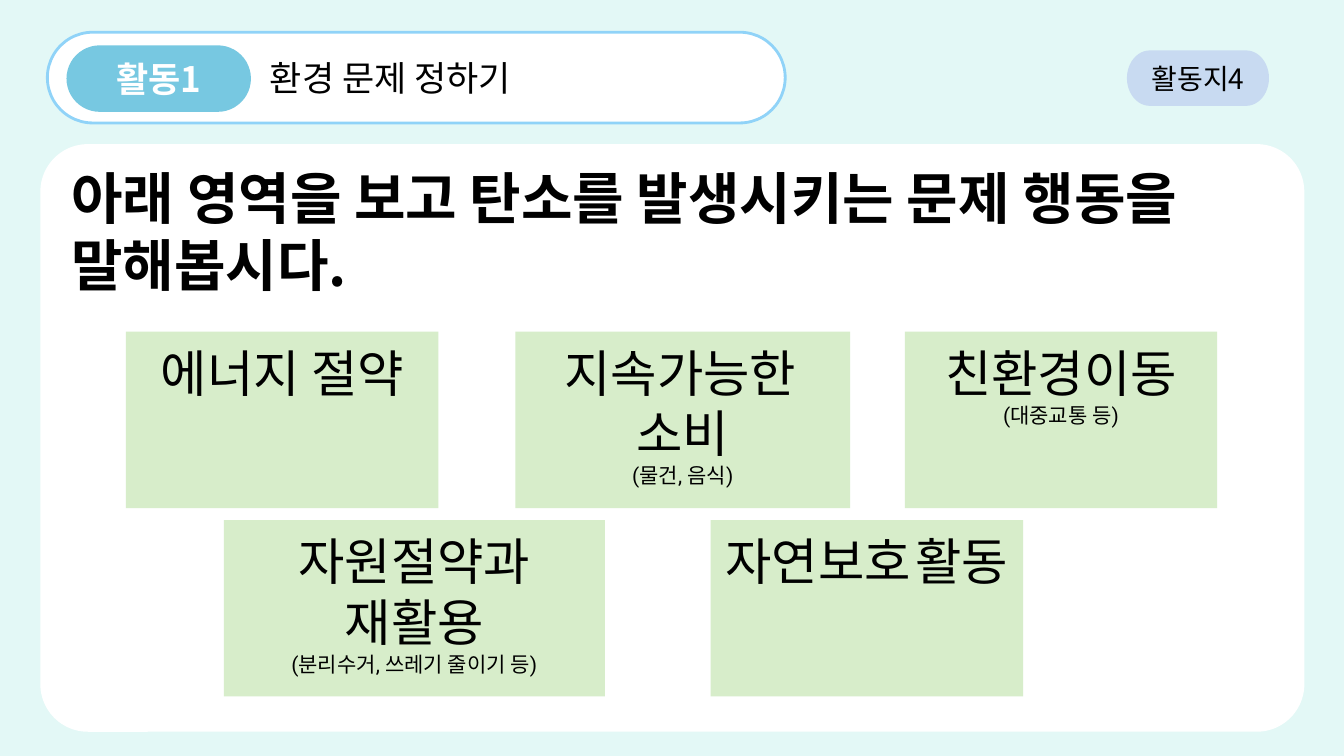
from dataclasses import dataclass

from lxml import etree
from pptx import Presentation, util as u
from pptx.dml.color import RGBColor
from pptx.enum import shapes, text
from pptx.oxml import ns

WIDE, HIGH = u.Inches(13.333), u.Inches(7.5)
COLS, ROWS = 40, 22.5


@dataclass(frozen=True)
class Theme:
    back: str = "E3F8F6"
    white: str = "FFFFFF"
    black: str = "000000"
    edge: str = "90D3F8"
    badge: str = "77C8E1"
    card: str = "D7EDCA"
    tag: str = "C8DAF1"
    font: str = "Noto Sans CJK KR"
    small: str = "Roboto"
    head: int = 40
    word: int = 36
    label: int = 25
    mark: int = 20
    note: int = 15


@dataclass(frozen=True)
class Box:
    """Left, top, width and height in grid columns and rows."""
    x: float
    y: float
    w: float
    h: float


@dataclass(frozen=True)
class Run:
    words: str
    size: int
    color: str = Theme.black
    bold: bool = False
    font: str = Theme.font


@dataclass(frozen=True)
class Card:
    row: int
    col: int
    wide: float
    lines: tuple


T = Theme()
ROUND = shapes.MSO_SHAPE.ROUNDED_RECTANGLE
CENTER, LEFT = text.PP_ALIGN.CENTER, text.PP_ALIGN.LEFT
TOP, MIDDLE = text.MSO_ANCHOR.TOP, text.MSO_ANCHOR.MIDDLE


def place(box: Box) -> tuple:
    return (u.Emu(int(box.x * WIDE / COLS)), u.Emu(int(box.y * HIGH / ROWS)),
            u.Emu(int(box.w * WIDE / COLS)), u.Emu(int(box.h * HIGH / ROWS)))


def write(shape, lines, align=CENTER, anchor=MIDDLE, pad=0.05) -> None:
    """Fill a shape with lines, each a tuple of runs."""
    frame = shape.text_frame
    frame.word_wrap = True
    frame.auto_size = text.MSO_AUTO_SIZE.NONE
    frame.vertical_anchor = anchor
    frame.margin_left = frame.margin_right = u.Inches(0.1)
    frame.margin_top = frame.margin_bottom = u.Inches(pad)
    frame.text = "\n".join("".join(r.words for r in line) for line in lines)
    for para, line in zip(frame.paragraphs, lines):
        para.alignment = align
        para.text = ""
        for item in line:
            run = para.add_run()
            run.text = item.words
            run.font.size = u.Pt(item.size)
            run.font.bold = item.bold
            run.font.color.rgb = RGBColor.from_string(item.color)
            run.font.name = item.font
            # Hangul takes the East Asian typeface
            east = etree.SubElement(run.font._element, ns.qn("a:ea"))
            east.set("typeface", T.font)


def draw(slide, kind, box: Box, fill: str, edge: str = "", bend=None):
    shape = slide.shapes.add_shape(kind, *place(box))
    shape.shadow.inherit = False
    shape.fill.solid()
    shape.fill.fore_color.rgb = RGBColor.from_string(fill)
    if edge:
        shape.line.color.rgb = RGBColor.from_string(edge)
        shape.line.width = u.Pt(2)
    else:
        shape.line.fill.background()
    if bend is not None:
        shape.adjustments[0] = bend
    return shape


def word(words: str) -> tuple:
    return (Run(words, T.word),)


def note(words: str) -> tuple:
    return (Run(words, T.note, font=T.small),)


GAP = note(" ")
CARDS = (
    Card(0, 0, 9.3, (word("에너지 절약"),)),
    Card(0, 1, 9.96, (word("지속가능한") + GAP, word("소비"), note("(물건, 음식)"))),
    Card(0, 2, 9.3, (word("친환경이동"), note("(대중교통 등)"))),
    Card(1, 0, 11.34, (word("자원절약과"), word("재활용"),
                       note("(분리수거, 쓰레기 줄이기 등)"))),
    Card(1, 1, 9.3, (word("자연보호") + GAP + word("활동"),)),
)
# First column and column step of each card row
STARTS, STEPS = (3.75, 6.66), (11.59, 14.49)


def main() -> None:
    deck = Presentation()
    deck.slide_width, deck.slide_height = WIDE, HIGH
    slide = deck.slides.add_slide(deck.slide_layouts[5])
    slide.background.fill.solid()
    slide.background.fill.fore_color.rgb = RGBColor.from_string(T.back)

    # Activity bar
    draw(slide, ROUND, Box(1.41, 0.96, 21.96, 2.7), T.white, T.edge, 0.5)
    badge = draw(slide, ROUND, Box(1.98, 1.35, 5.49, 1.98), T.badge, bend=0.5)
    write(badge, ((Run("활동1", T.label, T.white, True),),))
    topic = slide.shapes.add_textbox(*place(Box(7.74, 1.53, 10.26, 2.82)))
    write(topic, ((Run("환경 문제 정하기", T.label),),), LEFT, TOP)

    # Panel with the task as title, raised above the panel
    panel = draw(slide, ROUND, Box(1.2, 4.29, 37.62, 17.49), T.white, bend=0.081)
    title = slide.shapes.title
    title.left, title.top, title.width, title.height = place(
        Box(1.83, 4.8, 36.36, 4.14))
    task = "아래 영역을 보고 탄소를 발생시키는 문제 행동을 말해봅시다."
    write(title, ((Run(task, T.head, bold=True),),), LEFT)
    panel.element.addnext(title.element)

    # Topic cards
    for card in CARDS:
        left = STARTS[card.row] + card.col * STEPS[card.row]
        box = Box(left, 9.87 + 5.61 * card.row, card.wide, 5.25)
        shape = draw(slide, shapes.MSO_SHAPE.RECTANGLE, box, T.card)
        write(shape, card.lines, anchor=TOP, pad=0.1)

    # Worksheet tag
    tag = draw(slide, shapes.MSO_SHAPE.FLOWCHART_TERMINATOR,
               Box(33.54, 1.5, 4.23, 1.65), T.tag)
    write(tag, ((Run("활동지4", T.mark),),))

    deck.save("out.pptx")


if __name__ == "__main__":
    main()
